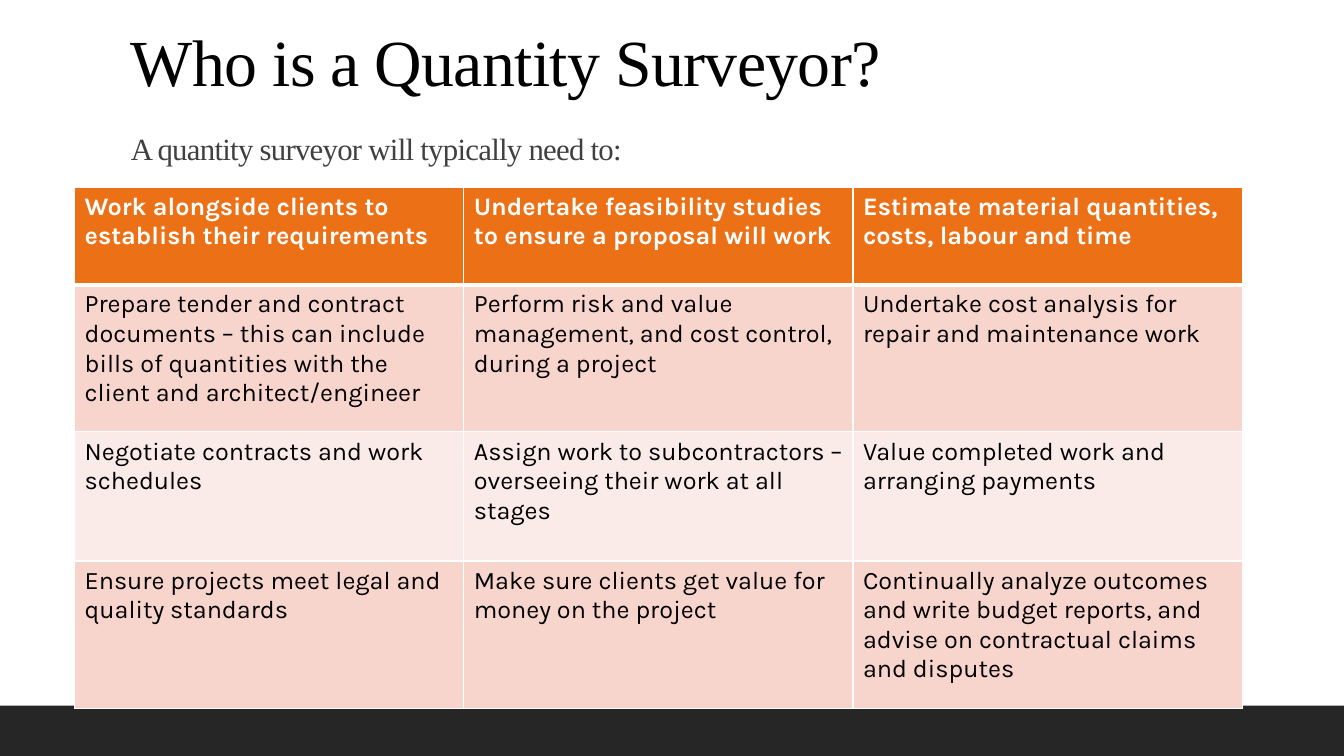
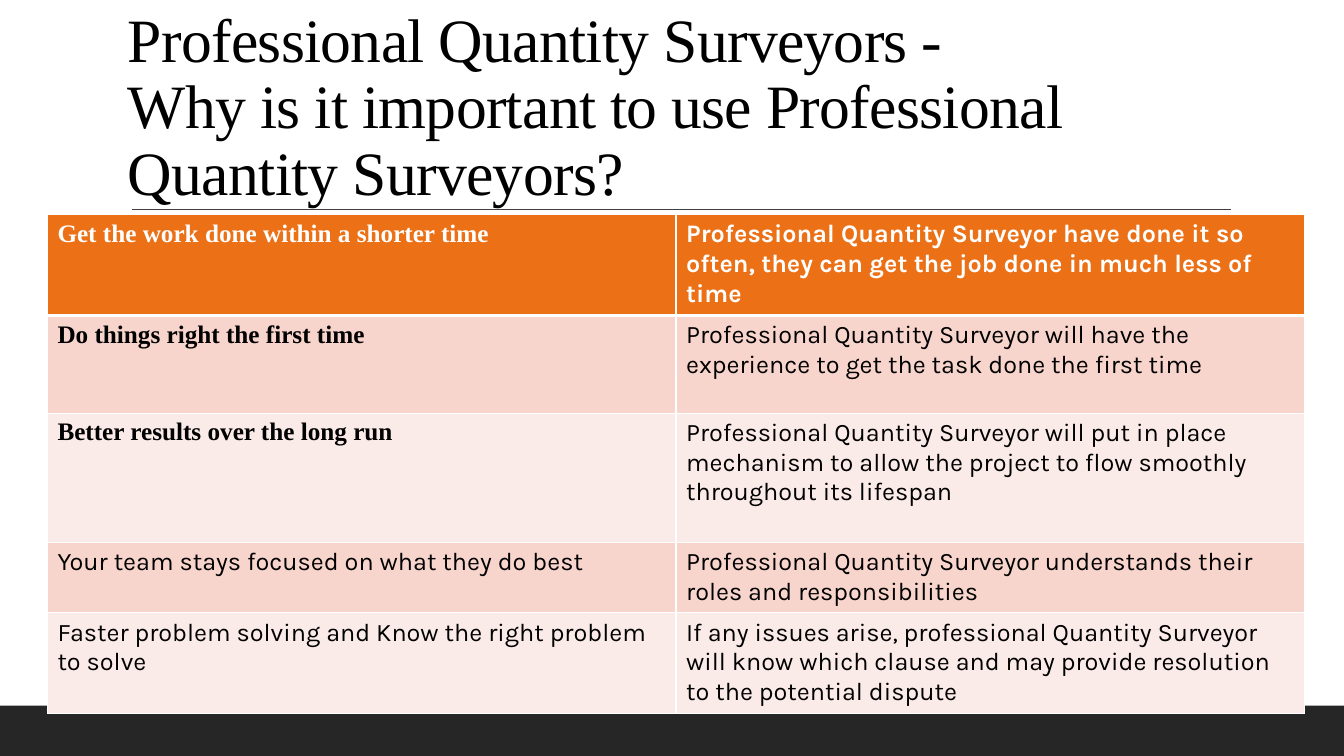
"""Build two slides on the work and worth of quantity surveyors."""
from dataclasses import dataclass

import lxml.etree
import pptx
import pptx.dml.color
import pptx.enum.shapes
import pptx.enum.text
import pptx.oxml.ns
import pptx.util


@dataclass(frozen=True)
class Theme:
    serif: str = "Times New Roman"
    sans: str = "Karla"
    ink: str = "000000"
    soft: str = "404040"
    dark: str = "262626"
    white: str = "FFFFFF"
    head: str = "EC7016"
    bands: tuple = ("F8D5CC", "FBEBE8")
    big: int = 47
    title: int = 44
    lead: int = 22
    body: int = 18
    thin: int = 1
    thick: int = 3


THEME = Theme()
WIDE = pptx.util.Inches(13.33)
HIGH = pptx.util.Inches(7.5)

TASKS = [
    ["Work alongside clients to establish their requirements",
     "Undertake feasibility studies to ensure a proposal will work",
     "Estimate material quantities, costs, labour and time"],
    ["Prepare tender and contract documents – this can include bills of "
     "quantities with the client and architect/engineer",
     "Perform risk and value management, and cost control, during a project",
     "Undertake cost analysis for repair and maintenance work"],
    ["Negotiate contracts and work schedules",
     "Assign work to subcontractors – overseeing their work at all stages",
     "Value completed work and arranging payments"],
    ["Ensure projects meet legal and quality standards",
     "Make sure clients get value for money on the project",
     "Continually analyze outcomes and write budget reports, and advise on "
     "contractual claims and disputes"],
]
GAINS = [
    ["Get the work done within a shorter time",
     "Professional Quantity Surveyor have done it so often, they can get the "
     "job done in much less of time"],
    ["Do things right the first time",
     "Professional Quantity Surveyor will have the experience to get the task "
     "done the first time"],
    ["Better results over the long run",
     "Professional Quantity Surveyor will put in place mechanism to allow the "
     "project to flow smoothly throughout its lifespan"],
    ["Your team stays focused on what they do best",
     "Professional Quantity Surveyor understands their roles and "
     "responsibilities"],
    ["Faster problem solving and Know the right problem to solve",
     "If any issues arise, professional Quantity Surveyor will know which "
     "clause and may provide resolution to the potential dispute"],
]


def across(share):
    return round(WIDE * share / 100)


def down(share):
    return round(HIGH * share / 100)


def place(left, top, width, height):
    return across(left), down(top), across(width), down(height)


def paint(fill, tone):
    fill.solid()
    fill.fore_color.rgb = pptx.dml.color.RGBColor.from_string(tone)


def write(para, text, face, size, tone, bold=False):
    run = para.add_run()
    run.text = text
    run.font.name = face
    run.font.size = pptx.util.Pt(size)
    run.font.bold = bold
    run.font.color.rgb = pptx.dml.color.RGBColor.from_string(tone)
    return run


def add_frame(slide):
    band = slide.shapes.add_shape(
        pptx.enum.shapes.MSO_SHAPE.RECTANGLE, *place(0, 93.33, 100, 6.67))
    band.shadow.inherit = False
    paint(band.fill, THEME.dark)
    band.line.fill.background()
    rule = slide.shapes.add_connector(
        pptx.enum.shapes.MSO_CONNECTOR.STRAIGHT, *place(9.83, 27.73, 91.6, 27.73))
    rule.line.color.rgb = pptx.dml.color.RGBColor.from_string(THEME.soft)
    rule.line.width = pptx.util.Pt(THEME.thin)
    props = rule.element.spPr
    lxml.etree.SubElement(props, pptx.oxml.ns.qn("a:effectLst"))


def add_title(slide, spot, lines):
    frame = slide.shapes.add_textbox(*place(*spot)).text_frame
    frame.word_wrap = True
    frame.vertical_anchor = pptx.enum.text.MSO_ANCHOR.BOTTOM
    for rank, (text, size, tone, gap) in enumerate(lines):
        para = frame.add_paragraph() if rank else frame.paragraphs[0]
        para.line_spacing = 0.9
        para.space_before = pptx.util.Pt(gap)
        run = write(para, text, THEME.serif, size, tone)
        run.font._element.set("spc", "-50")


def edge_cell(cell, top, base):
    props = cell._tc.get_or_add_tcPr()
    sides = {"L": THEME.thin, "R": THEME.thin, "T": top, "B": base}
    for rank, (side, width) in enumerate(sides.items()):
        line = lxml.etree.Element(pptx.oxml.ns.qn(f"a:ln{side}"),
                                  w=str(pptx.util.Pt(width)))
        fill = lxml.etree.SubElement(line, pptx.oxml.ns.qn("a:solidFill"))
        lxml.etree.SubElement(fill, pptx.oxml.ns.qn("a:srgbClr"),
                              val=THEME.white)
        props.insert(rank, line)


def add_grid(slide, left, top, width, heights, texts, serifs=0):
    count = len(texts[0])
    grid = slide.shapes.add_table(
        len(texts), count, *place(left, top, width, sum(heights))).table
    grid.horz_banding = False
    for col in grid.columns:
        col.width = across(width / count)
    for row, (height, line) in enumerate(zip(heights, texts)):
        grid.rows[row].height = down(height)
        head = row == 0
        for col, text in enumerate(line):
            cell = grid.cell(row, col)
            serif = col == 0 and row < serifs
            paint(cell.fill, THEME.head if head else THEME.bands[(row - 1) % 2])
            edge_cell(cell, THEME.thick if row == 1 else THEME.thin,
                      THEME.thick if head else THEME.thin)
            write(cell.text_frame.paragraphs[0], text,
                  THEME.serif if serif else THEME.sans, THEME.body,
                  THEME.white if head else THEME.ink, head or serif)


def add_slide(deck):
    slide = deck.slides.add_slide(deck.slide_layouts[6])
    paint(slide.background.fill, THEME.white)
    add_frame(slide)
    return slide


def main():
    deck = pptx.Presentation()
    deck.slide_width, deck.slide_height = WIDE, HIGH

    slide = add_slide(deck)
    add_title(slide, (9, 3.73, 82.52, 19.07), [
        ("Who is a Quantity Surveyor?", THEME.big, THEME.ink, 0),
        ("A quantity surveyor will typically need to:", THEME.lead, THEME.soft, 24),
    ])
    add_grid(slide, 5.55, 24.73, 86.87, (12.93, 19.47, 17.07, 19.47), TASKS)

    slide = add_slide(deck)
    add_title(slide, (8.78, 0.53, 82.52, 27.73), [
        ("Professional Quantity Surveyors -", THEME.title, THEME.ink, 0),
        ("Why is it important to use Professional Quantity Surveyors?",
         THEME.title, THEME.ink, 0),
    ])
    add_grid(slide, 3.53, 28.4, 93.55, (12.93, 12.93, 17.07, 9.2, 13.07),
             GAINS, serifs=3)

    deck.save("out.pptx")


if __name__ == "__main__":
    main()
